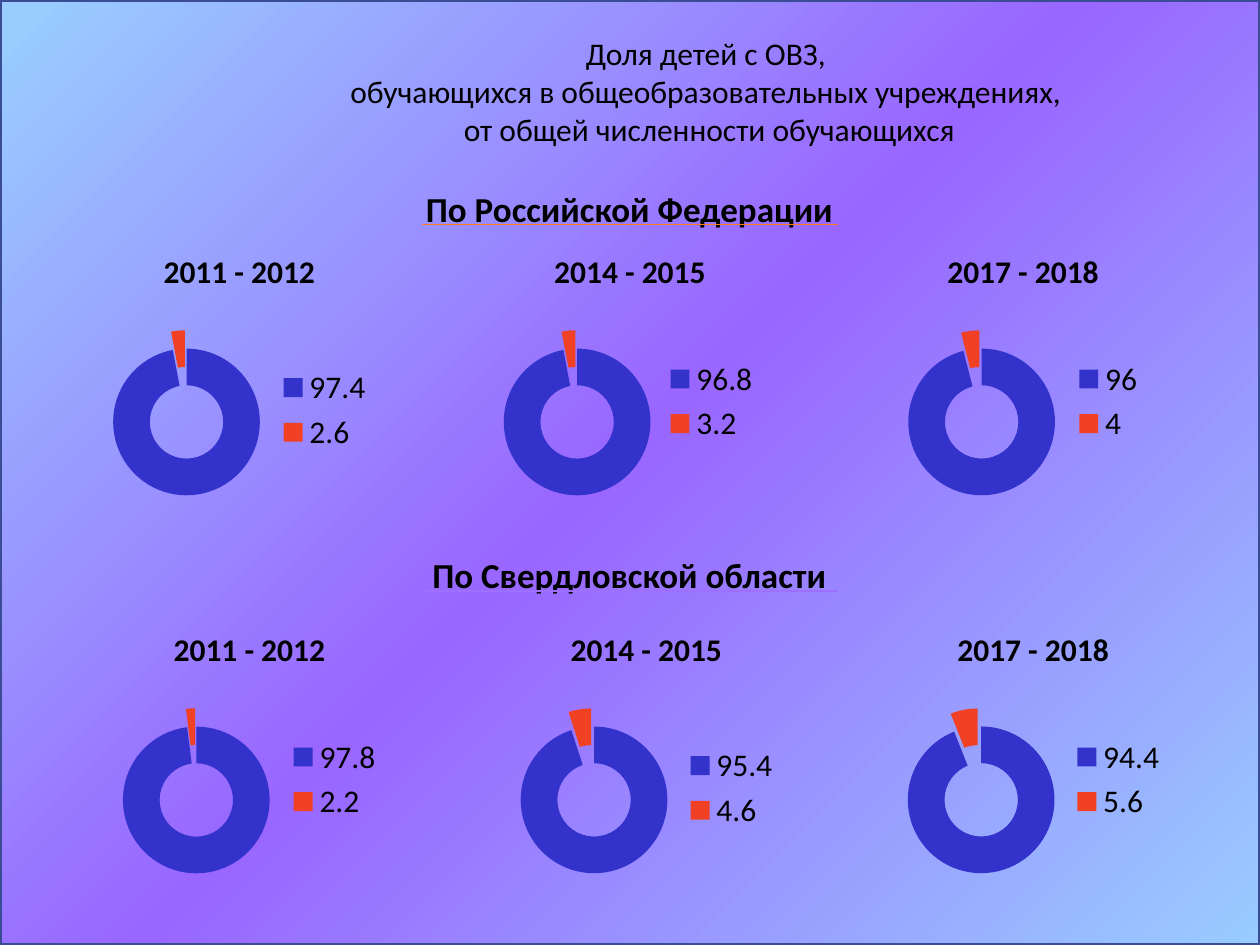
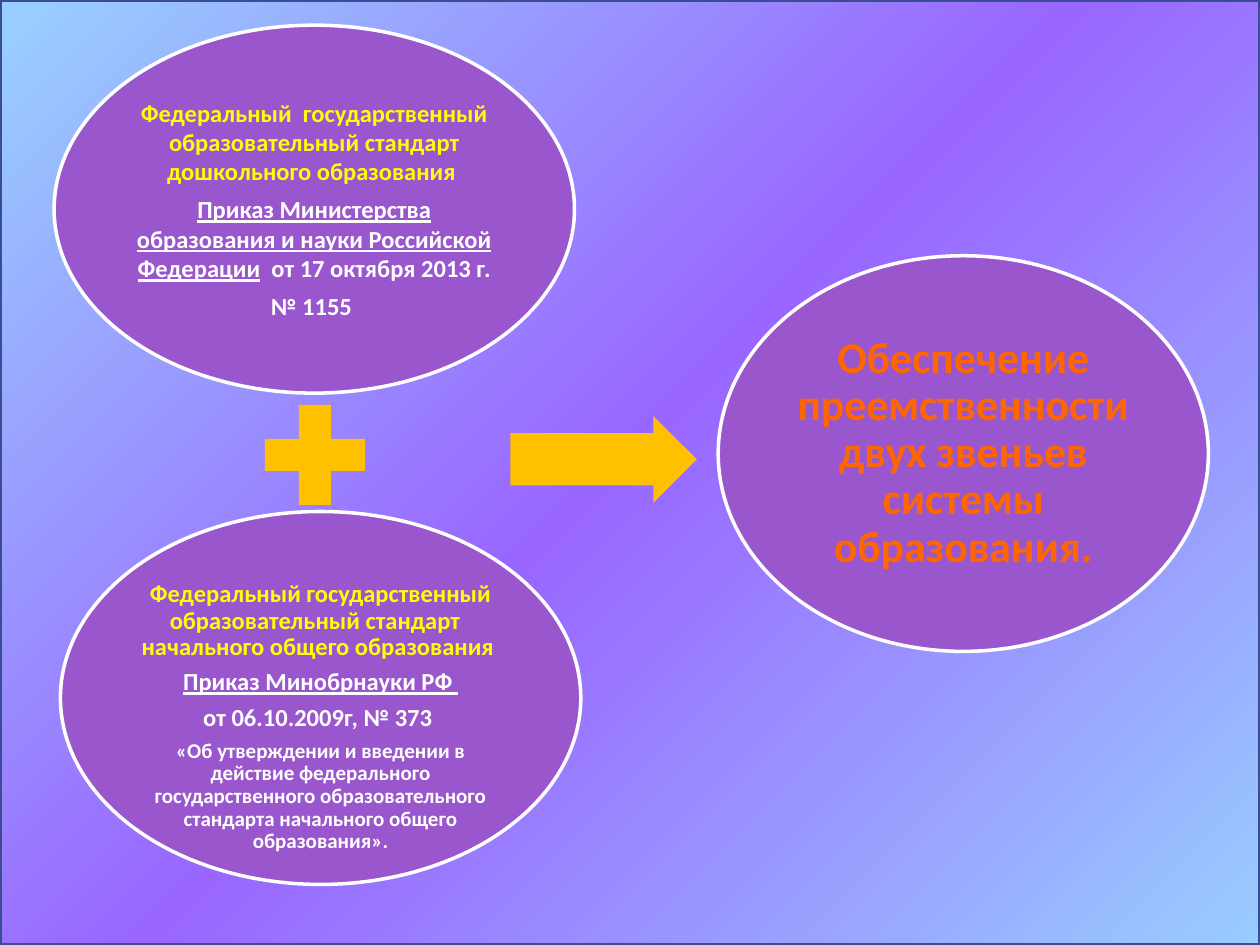
from dataclasses import dataclass

from pptx import Presentation
from pptx.chart.data import CategoryChartData
from pptx.dml.color import RGBColor
from pptx.enum.chart import XL_CHART_TYPE as ChartType, XL_LEGEND_POSITION as LegendPosition
from pptx.enum.shapes import MSO_CONNECTOR as Connector, MSO_SHAPE as Shape
from pptx.enum.text import MSO_ANCHOR as Anchor, MSO_AUTO_SIZE as AutoSize, PP_ALIGN as Align
from pptx.oxml import parse_xml
from pptx.oxml.ns import nsdecls, qn
from pptx.util import Inches, Pt


@dataclass(frozen=True)
class Theme:
    """Colours, font and type sizes used on both slides."""

    font: str = "Calibri"
    black: str = "000000"
    white: str = "FFFFFF"
    sky: str = "99CCFF"
    violet: str = "9966FF"
    frame: str = "3A4C94"
    oval: str = "9A57CD"
    gold: str = "FFC000"
    yellow: str = "FFFF00"
    orange: str = "FF6600"
    rule: str = "FF7C1B"
    faint_rule: str = "9E70FF"
    majority: str = "3333CC"
    minority: str = "F14124"
    heading: int = 20
    normal: int = 18
    standard: int = 14
    note: int = 12
    outcome: int = 25


@dataclass(frozen=True)
class Ring:
    """One doughnut: its years, percentage, left edge and layout nudges."""

    years: str
    share: float
    left: float
    ring_shift: float = 0
    legend_shift: float = 0
    legend_drop: float = 0


THEME = Theme()
WIDTH, HEIGHT = 10, 7.5
OVAL_MARGIN = (1 - 0.5 ** 0.5) / 2
EXPLOSION = 25


def color(value):
    """Turn a hex string into a colour."""
    return RGBColor.from_string(value)


def inches(*lengths):
    """Convert several lengths to inches."""
    return [Inches(length) for length in lengths]


def apply_format(target, values):
    """Set every attribute in a dict of format values."""
    for name, value in values.items():
        setattr(target, name, value)


def style_font(font, size, shade=THEME.black, **extra):
    """Give a font the theme face, a size and a colour."""
    apply_format(font, {"name": THEME.font, "size": Pt(size), **extra})
    font.color.rgb = color(shade)


def add_panel(slide, kind, box, fill, line=None):
    """Add a preset shape without shadow, with an optional outline."""
    shape = slide.shapes.add_shape(kind, *inches(*box))
    shape.shadow.inherit = False
    shape.fill.solid()
    shape.fill.fore_color.rgb = color(fill)
    if line:
        shape.line.color.rgb = color(line)
        shape.line.width = Pt(2)
    else:
        shape.line.fill.background()
    return shape


def add_backdrop(slide):
    """Put the framed diagonal gradient behind everything else."""
    shape = add_panel(slide, Shape.RECTANGLE, (0, 0, WIDTH, HEIGHT), THEME.violet, THEME.frame)
    stops = "".join(
        f'<a:gs pos="{position}000"><a:srgbClr val="{shade}"/></a:gs>'
        for position, shade in ((2, THEME.sky), (49, THEME.violet), (100, THEME.sky))
    )
    gradient = parse_xml(
        f'<a:gradFill {nsdecls("a")} rotWithShape="1"><a:gsLst>{stops}</a:gsLst>'
        '<a:lin ang="2700000" scaled="0"/></a:gradFill>'
    )
    solid = shape.element.spPr.find(qn("a:solidFill"))
    solid.getparent().replace(solid, gradient)
    shape.element.getparent().insert(2, shape.element)


def add_title(slide, box, lines):
    """Fill the title placeholder with centred lines."""
    title = slide.shapes.title
    apply_format(title, dict(zip(("left", "top", "width", "height"), inches(*box))))
    frame = title.text_frame
    apply_format(frame, {
        "text": "\n".join(lines), "word_wrap": True,
        "auto_size": AutoSize.NONE, "vertical_anchor": Anchor.TOP,
    })
    for paragraph in frame.paragraphs:
        paragraph.alignment = Align.CENTER
        style_font(paragraph.runs[0].font, THEME.normal)


def add_heading(slide, box, text, rule_drop, rule_shade):
    """Add a region heading with a thin rule under it."""
    left, top, width, height = box
    frame = slide.shapes.add_textbox(*inches(*box)).text_frame
    frame.word_wrap = True
    paragraph = frame.paragraphs[0]
    paragraph.alignment = Align.CENTER
    run = paragraph.add_run()
    run.text = text
    style_font(run.font, THEME.heading, bold=True)
    y = top + rule_drop
    rule = slide.shapes.add_connector(
        Connector.STRAIGHT, *inches(left + 0.48, y, left + width - 0.47, y))
    rule.line.color.rgb = color(rule_shade)
    rule.line.width = Pt(0.75)
    rule.element.spPr.append(parse_xml(f'<a:effectLst {nsdecls("a")}/>'))


def manual_layout(x, y, width, height, inner=False):
    """Build a chart layout from fractions of the chart box."""
    target = '<c:layoutTarget val="inner"/>' if inner else ""
    modes = "".join(f'<c:{axis}Mode val="edge"/>' for axis in "xy")
    sizes = "".join(
        f'<c:{name} val="{value:.2f}"/>' for name, value in zip("xywh", (x, y, width, height)))
    return parse_xml(
        f'<c:layout {nsdecls("c")}><c:manualLayout>{target}{modes}{sizes}'
        '</c:manualLayout></c:layout>'
    )


def set_layout(parent, index, layout):
    """Replace the layout of a chart part."""
    previous = parent.find(qn("c:layout"))
    if previous is not None:
        parent.remove(previous)
    parent.insert(index, layout)


def add_ring(slide, ring, box):
    """Add one titled doughnut chart with its legend."""
    shares = (round(100 - ring.share, 1), ring.share)
    data = CategoryChartData()
    data.categories = [f"{share:g}" for share in shares]
    data.add_series(ring.years, [round(share) for share in shares])
    chart = slide.shapes.add_chart(ChartType.DOUGHNUT, *inches(*box), data).chart
    style_font(chart.font, THEME.normal)

    chart.has_title = True
    title = chart.chart_title.text_frame
    title.text = ring.years
    style_font(title.paragraphs[0].runs[0].font, THEME.normal, bold=True)

    chart.has_legend = True
    apply_format(chart.legend, {"position": LegendPosition.RIGHT, "include_in_layout": False})
    style_font(chart.legend.font, THEME.normal)

    plot = chart.plots[0]
    plot.vary_by_categories = True
    for index, shade in enumerate((THEME.majority, THEME.minority)):
        point = plot.series[0].points[index].format
        point.fill.solid()
        point.fill.fore_color.rgb = color(shade)
        point.line.fill.background()

    root = chart.element
    root.find(f".//{qn('c:dPt')}").addprevious(
        parse_xml(f'<c:explosion {nsdecls("c")} val="{EXPLOSION}"/>'))
    set_layout(root.find(f".//{qn('c:plotArea')}"), 0,
               manual_layout(0.13 + ring.ring_shift, 0.34, 0.45, 0.57, inner=True))
    set_layout(root.find(f".//{qn('c:legend')}"), 1,
               manual_layout(0.6 + ring.legend_shift, 0.42 + ring.legend_drop, 0.26, 0.33))
    root.find(qn("c:chart")).addnext(parse_xml(
        f'<c:spPr {nsdecls("c", "a")}><a:noFill/><a:ln><a:noFill/></a:ln></c:spPr>'))


def add_region(slide, top, name, rings, rule_drop, rule_shade, chart_drop):
    """Add a region heading and its row of doughnuts."""
    add_heading(slide, (2.87, top, 4.25, 0.44), name, rule_drop, rule_shade)
    for ring in rings:
        add_ring(slide, ring, (ring.left, top + chart_drop, 2.94, 2.3))


def add_oval(slide, box, paragraphs, inset=0.02, extra_top=0, spacing=None):
    """Add an oval and centred text in its inner rectangle."""
    left, top, width, height = box
    add_panel(slide, Shape.OVAL, box, THEME.oval, THEME.white)
    inner = (left + width * OVAL_MARGIN, top + height * OVAL_MARGIN,
             width * (1 - 2 * OVAL_MARGIN), height * (1 - 2 * OVAL_MARGIN))
    frame = slide.shapes.add_textbox(*inches(*inner)).text_frame
    apply_format(frame, {
        "word_wrap": True, "vertical_anchor": Anchor.MIDDLE,
        "margin_left": Inches(inset), "margin_right": Inches(inset),
        "margin_top": Inches(inset + extra_top), "margin_bottom": Inches(inset),
    })
    for number, (size, shade, runs) in enumerate(paragraphs):
        paragraph = frame.add_paragraph() if number else frame.paragraphs[0]
        apply_format(paragraph, {
            "alignment": Align.CENTER, "space_after": Pt(0.35 * size), "line_spacing": spacing})
        for text, underline in runs:
            for line_number, line in enumerate(text.split("\n")):
                if line_number:
                    paragraph.add_line_break()
                run = paragraph.add_run()
                run.text = line
                style_font(run.font, size, shade, bold=True, underline=underline)


def build_shares_slide(presentation):
    """Build the slide with the shares of pupils in two regions."""
    slide = presentation.slides.add_slide(presentation.slide_layouts[5])
    add_backdrop(slide)
    add_title(slide, (1.85, 0.22, 7.56, 1.01), (
        "Доля детей с ОВЗ, ",
        "обучающихся в общеобразовательных учреждениях, ",
        "от общей численности обучающихся",
    ))
    years = ("2011 - 2012", "2014 - 2015", "2017 - 2018")
    add_region(slide, 1.44, "По Российской Федерации", (
        Ring(years[0], 2.6, 0.43, legend_drop=0.03),
        Ring(years[1], 3.2, 3.53, legend_shift=-0.01),
        Ring(years[2], 4, 6.65, ring_shift=0.03),
    ), 0.34, THEME.rule, 0.4)
    add_region(slide, 4.34, "По Свердловской области", (
        Ring(years[0], 2.2, 0.51),
        Ring(years[1], 4.6, 3.66, legend_drop=0.03),
        Ring(years[2], 5.6, 6.73),
    ), 0.35, THEME.faint_rule, 0.5)


def build_standards_slide(presentation):
    """Build the slide where two standards add up to continuity."""
    slide = presentation.slides.add_slide(presentation.slide_layouts[6])
    add_backdrop(slide)
    size = THEME.standard
    add_oval(slide, (0.43, 0.2, 4.13, 2.92), (
        (size, THEME.yellow, [
            ("Федеральный  государственный образовательный стандарт "
             "дошкольного образования ", False)]),
        (size, THEME.white, [
            ("Приказ Министерства образования и науки Российской Федерации", True),
            ("  от 17 октября 2013 г.", False)]),
        (size, THEME.white, [("№ 1155 ", False)]),
    ))
    add_panel(slide, Shape.MATH_PLUS, (1.96, 3.07, 1.08, 1.08), THEME.gold)
    add_oval(slide, (0.48, 4.06, 4.13, 2.96), (
        (size, THEME.yellow, [
            ("Федеральный государственный образовательный стандарт  \n"
             "начального общего образования  ", False)]),
        (size, THEME.white, [("Приказ Минобрнауки РФ ", True)]),
        (size, THEME.white, [("от 06.10.2009г, № 373 ", False)]),
        (THEME.note, THEME.white, [
            ("«Об утверждении и введении в действие федерального государственного "
             "образовательного стандарта начального общего образования».", False)]),
    ), extra_top=0.31, spacing=0.9)
    arrow = add_panel(slide, Shape.RIGHT_ARROW, (4.05, 3.3, 1.48, 0.69), THEME.gold)
    arrow.adjustments[0] = 0.6
    add_oval(slide, (5.7, 2.03, 3.89, 3.14), (
        (THEME.outcome, THEME.orange, [
            ("Обеспечение преемственности двух звеньев системы образования.", False)]),
    ), inset=0.03, spacing=0.9)


def main():
    """Build both slides and save the presentation."""
    presentation = Presentation()
    presentation.slide_width, presentation.slide_height = inches(WIDTH, HEIGHT)
    build_shares_slide(presentation)
    build_standards_slide(presentation)
    presentation.save("out.pptx")


if __name__ == "__main__":
    main()
